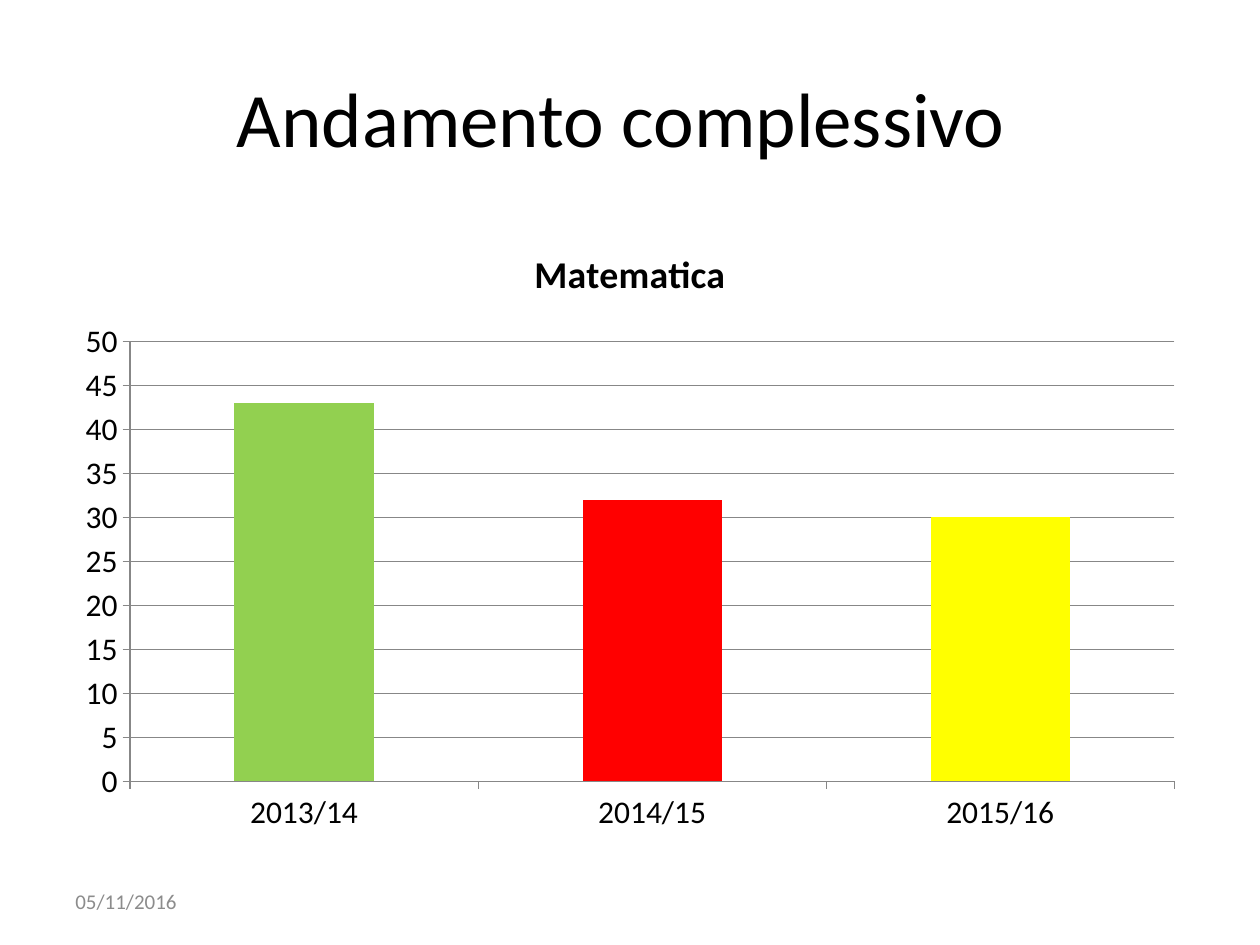
"""Build a slide with a column chart of the yearly mathematics results."""
from pptx import Presentation
from pptx.chart.data import CategoryChartData
from pptx.dml.color import RGBColor
from pptx.enum import chart as ch, text as tx
from pptx.util import Cm, Pt

HUES = {"ink": "000000", "date": "8C8C8C", "grid": "878787", "base": "4F81BD",
        "2013/14": "92D050", "2014/15": "FF0000", "2015/16": "FFFF00"}
FONT = "Calibri"


def style(font, size, hue):
    font.name = FONT
    font.size = Pt(size)
    font.color.rgb = RGBColor.from_string(HUES[hue])


def paint(fill, hue):
    fill.solid()
    fill.fore_color.rgb = RGBColor.from_string(HUES[hue])


deck = Presentation()
deck.slide_width, deck.slide_height = Cm(25.4), Cm(19.05)
slide = deck.slides.add_slide(deck.slide_layouts[6])
left, wide = Cm(1.27), Cm(22.86)

labels = [
    ("Andamento complessivo ", Cm(0.76), wide, Cm(3.18), 44, "ink", tx.PP_ALIGN.CENTER),
    ("05/11/2016", Cm(17.65), Cm(5.92), Cm(1.02), 12, "date", tx.PP_ALIGN.LEFT),
]
for words, top, width, height, size, hue, align in labels:
    frame = slide.shapes.add_textbox(left, top, width, height).text_frame
    frame.word_wrap = True
    frame.vertical_anchor = tx.MSO_ANCHOR.MIDDLE
    frame.text = words
    para = frame.paragraphs[0]
    para.alignment = align
    style(para.runs[0].font, size, hue)

years = ["2013/14", "2014/15", "2015/16"]
data = CategoryChartData()
data.categories = years
data.add_series("Matematica", [43, 32, 30])
chart = slide.shapes.add_chart(ch.XL_CHART_TYPE.COLUMN_STACKED, left, Cm(4.45),
                               wide, Cm(12.57), data).chart
style(chart.font, 18, "ink")
chart.has_legend = False
chart.has_title = True
title = chart.chart_title.text_frame
title.text = "Matematica"
font = title.paragraphs[0].runs[0].font
style(font, 21.6, "ink")
font.bold = True

plot = chart.plots[0]
plot.gap_width, plot.overlap = 150, 100
plot.vary_by_categories = False
bars = plot.series[0]
paint(bars.format.fill, "base")
for spot, year in enumerate(years):
    paint(bars.points[spot].format.fill, year)

scale = chart.value_axis
scale.minimum_scale, scale.maximum_scale, scale.major_unit = 0, 50, 5
scale.has_major_gridlines = True
for axis in (chart.category_axis, scale):
    axis.major_tick_mark = ch.XL_TICK_MARK.OUTSIDE
    axis.minor_tick_mark = ch.XL_TICK_MARK.NONE
for part in (chart.category_axis, scale, scale.major_gridlines):
    part.format.line.width = Pt(0.75)
    paint(part.format.line.fill, "grid")

deck.save("out.pptx")
